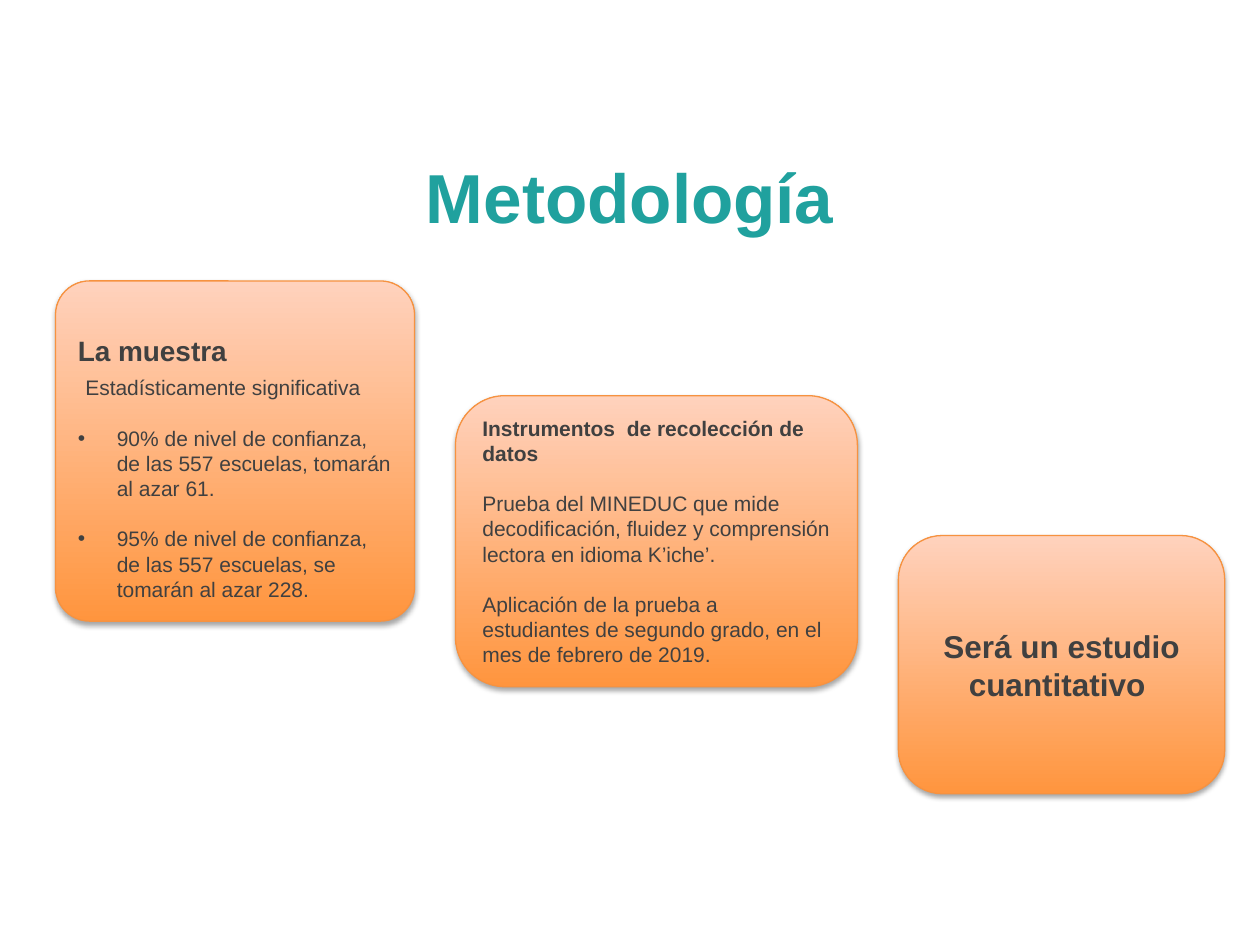
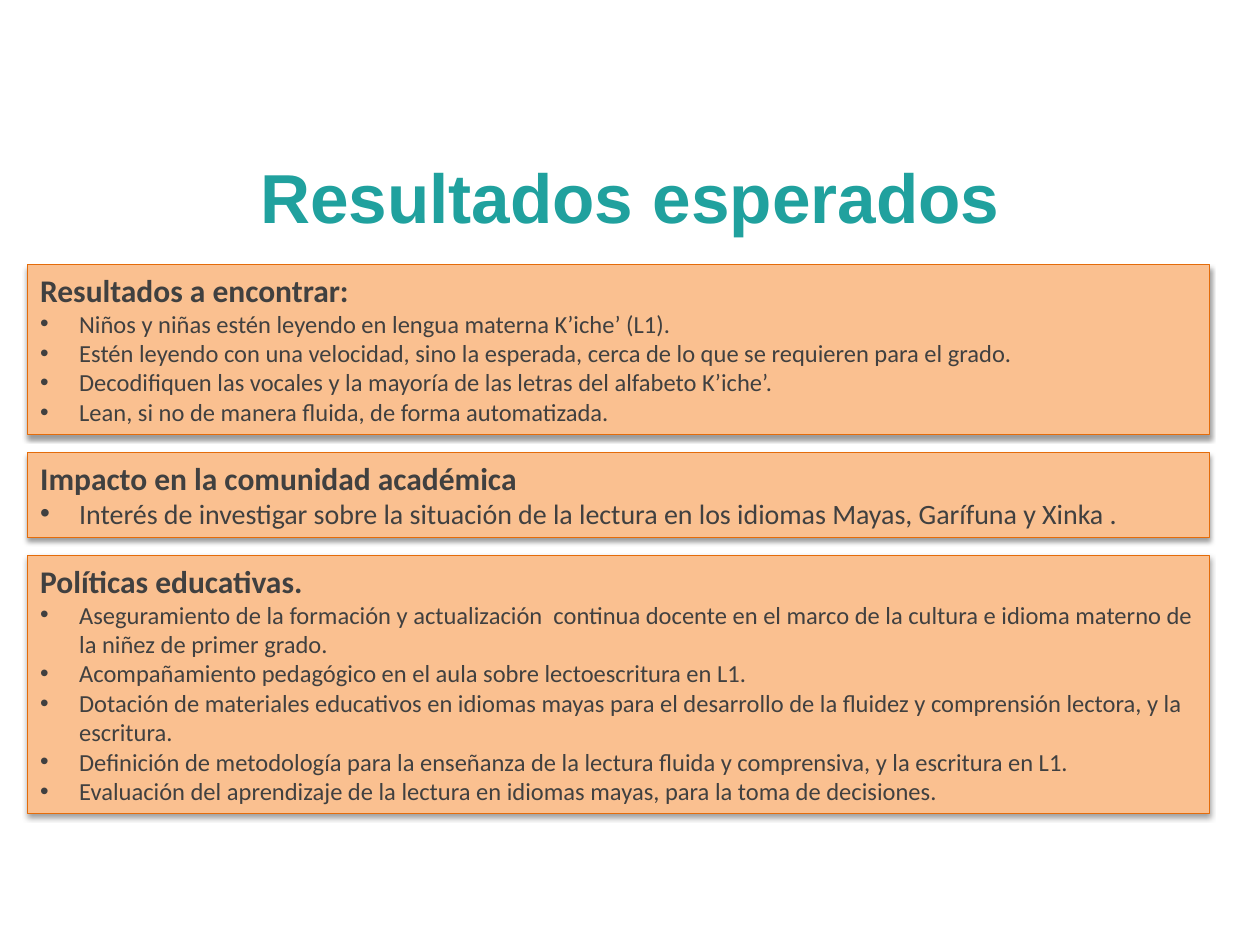
from dataclasses import dataclass
from lxml import etree
from pptx import Presentation
from pptx.dml.color import RGBColor
from pptx.enum.shapes import MSO_SHAPE
from pptx.enum.text import MSO_ANCHOR, PP_ALIGN
from pptx.oxml.ns import qn
from pptx.util import Inches, Pt

ROUNDED, RECT = MSO_SHAPE.ROUNDED_RECTANGLE, MSO_SHAPE.RECTANGLE
TOP, MIDDLE = MSO_ANCHOR.TOP, MSO_ANCHOR.MIDDLE
LEFT, CENTER = PP_ALIGN.LEFT, PP_ALIGN.CENTER
WIDTH, HEIGHT = Inches(10), Inches(7.5)


@dataclass(frozen=True)
class Theme:
    heading_font: str = "Arial"
    body_font: str = "Calibri"
    title: str = "20A19E"
    text: str = "404040"
    card_bottom: str = "FF953E"
    card_top: str = "FFD2BD"
    card_line: str = "F69240"
    panel: str = "FAC090"
    panel_line: str = "E46C0A"
    title_size: float = 39.6
    head_size: int = 18
    card_head_size: int = 16
    panel_size: int = 14
    card_size: int = 12
    line_width: float = 0.75
    hanging: float = 0.31
    blank_line: float = 14.4


T = Theme()


def rgb(value):
    return RGBColor.from_string(value)


def place(left, top, width, height):
    return (int(WIDTH * left / 100), int(HEIGHT * top / 100),
            int(WIDTH * width / 100), int(HEIGHT * height / 100))


def add_bullet(p):
    pPr = p._p.get_or_add_pPr()
    pPr.set("marL", str(Inches(T.hanging)))
    pPr.set("indent", str(-Inches(T.hanging)))
    etree.SubElement(pPr, qn("a:buFont")).set("typeface", "Arial")
    etree.SubElement(pPr, qn("a:buChar")).set("char", "•")


def add_text(tf, text, font=T.heading_font, size=T.card_size, color=T.text,
             bold=False, align=LEFT, before=0, indent=0, bullet=False):
    p = tf.paragraphs[0] if not tf.text else tf.add_paragraph()
    if bullet:
        add_bullet(p)
    elif indent:
        p._p.get_or_add_pPr().set("marL", str(Inches(indent)))
    p.alignment = align
    p.space_before = Pt(before)
    r = p.add_run()
    r.text = text
    r.font.name, r.font.size, r.font.bold = font, Pt(size), bold
    r.font.color.rgb = rgb(color)


def add_shadow(sp, alpha, distance):
    sp.shadow.inherit = False
    effects = sp._element.spPr.find(qn("a:effectLst"))
    shadow = etree.SubElement(effects, qn("a:outerShdw"), blurRad=str(Pt(3.1)),
                              dist=str(Pt(distance)), dir="5400000", rotWithShape="0")
    color = etree.SubElement(shadow, qn("a:srgbClr"), val="000000")
    etree.SubElement(color, qn("a:alpha"), val=str(alpha * 1000))


def add_box(s, kind, area, line, anchor):
    sp = s.shapes.add_shape(kind, *place(*area))
    sp.line.color.rgb = rgb(line)
    sp.line.width = Pt(T.line_width)
    sp.text_frame.word_wrap = True
    sp.text_frame.vertical_anchor = anchor
    return sp


def add_card(s, area, corner=0.17):
    sp = add_box(s, ROUNDED, area, T.card_line, MIDDLE)
    sp.adjustments[0] = corner
    sp.fill.gradient()
    sp.fill.gradient_angle = 90
    for stop, color in zip(sp.fill.gradient_stops, (T.card_bottom, T.card_top)):
        stop.color.rgb = rgb(color)
    add_shadow(sp, 35, 1.8)
    return sp.text_frame


def add_panel(s, area, heading, items, size):
    sp = add_box(s, RECT, area, T.panel_line, TOP)
    sp.fill.solid()
    sp.fill.fore_color.rgb = rgb(T.panel)
    add_shadow(sp, 38, 1.6)
    add_text(sp.text_frame, heading, font=T.body_font, size=T.head_size, bold=True)
    for item in items:
        add_text(sp.text_frame, item, font=T.body_font, size=size, bullet=True)


def add_titled_slide(prs, title):
    s = prs.slides.add_slide(prs.slide_layouts[6])
    tf = s.shapes.add_textbox(*place(5, 12.4, 90, 16.67)).text_frame
    tf.word_wrap = True
    tf.vertical_anchor = MIDDLE
    add_text(tf, title, size=T.title_size, color=T.title, bold=True, align=CENTER)
    return s


def build_methodology(prs):
    s = add_titled_slide(prs, "Metodología")
    left, gap = 4.4, 3.25
    areas = []
    for top, width, height in ((29.73, 28.5, 36), (41.87, 31.9, 30.8), (56.67, 25.9, 27.33)):
        areas.append((left, top, width, height))
        left += width + gap
    sample_area, instruments_area, study_area = areas

    sample = add_card(s, sample_area, corner=0.1)
    sample.margin_top = Inches(0.31)
    add_text(sample, "La muestra", size=T.card_head_size, bold=True)
    add_text(sample, "Estadísticamente significativa", before=4.5, indent=0.06)
    for item in ("90% de nivel de confianza, de las 557 escuelas, tomarán al azar 61.",
                 "95% de nivel de confianza, de las 557 escuelas, se tomarán al azar 228."):
        add_text(sample, item, before=T.blank_line, bullet=True)

    instruments = add_card(s, instruments_area)
    add_text(instruments, "Instrumentos  de recolección de datos", bold=True)
    for item in ("Prueba del MINEDUC que mide decodificación, fluidez y comprensión "
                 "lectora en idioma K’iche’.",
                 "Aplicación de la prueba a estudiantes de segundo grado, en el mes "
                 "de febrero de 2019."):
        add_text(instruments, item, before=T.blank_line)

    study = add_card(s, study_area)
    add_text(study, "Será un estudio cuantitativo ", size=T.head_size, bold=True, align=CENTER)


def build_results(prs):
    s = add_titled_slide(prs, "Resultados esperados")
    panels = (
        ("Resultados a encontrar:", 18, T.panel_size, (
            "Niños y niñas estén leyendo en lengua materna K’iche’ (L1).",
            "Estén leyendo con una velocidad, sino la esperada, cerca de lo que se "
            "requieren para el grado.",
            "Decodifiquen las vocales y la mayoría de las letras del alfabeto K’iche’.",
            "Lean, si no de manera fluida, de forma automatizada.")),
        ("Impacto en la comunidad académica", 9, 16, (
            "Interés de investigar sobre la situación de la lectura en los idiomas "
            "Mayas, Garífuna y Xinka .",)),
        ("Políticas educativas.", 27.33, T.panel_size, (
            "Aseguramiento de la formación y actualización  continua docente en el "
            "marco de la cultura e idioma materno de la niñez de primer grado.",
            "Acompañamiento pedagógico en el aula sobre lectoescritura en L1.",
            "Dotación de materiales educativos en idiomas mayas para el desarrollo "
            "de la fluidez y comprensión lectora, y la escritura.",
            "Definición de metodología para la enseñanza de la lectura fluida y "
            "comprensiva, y la escritura en L1.",
            "Evaluación del aprendizaje de la lectura en idiomas mayas, para la toma "
            "de decisiones.")),
    )
    top, gap = 28, 1.9
    for heading, height, size, items in panels:
        add_panel(s, (2.2, top, 93.8, height), heading, items, size)
        top += height + gap


def main():
    prs = Presentation()
    prs.slide_width, prs.slide_height = WIDTH, HEIGHT
    build_methodology(prs)
    build_results(prs)
    prs.save("out.pptx")


if __name__ == "__main__":
    main()
